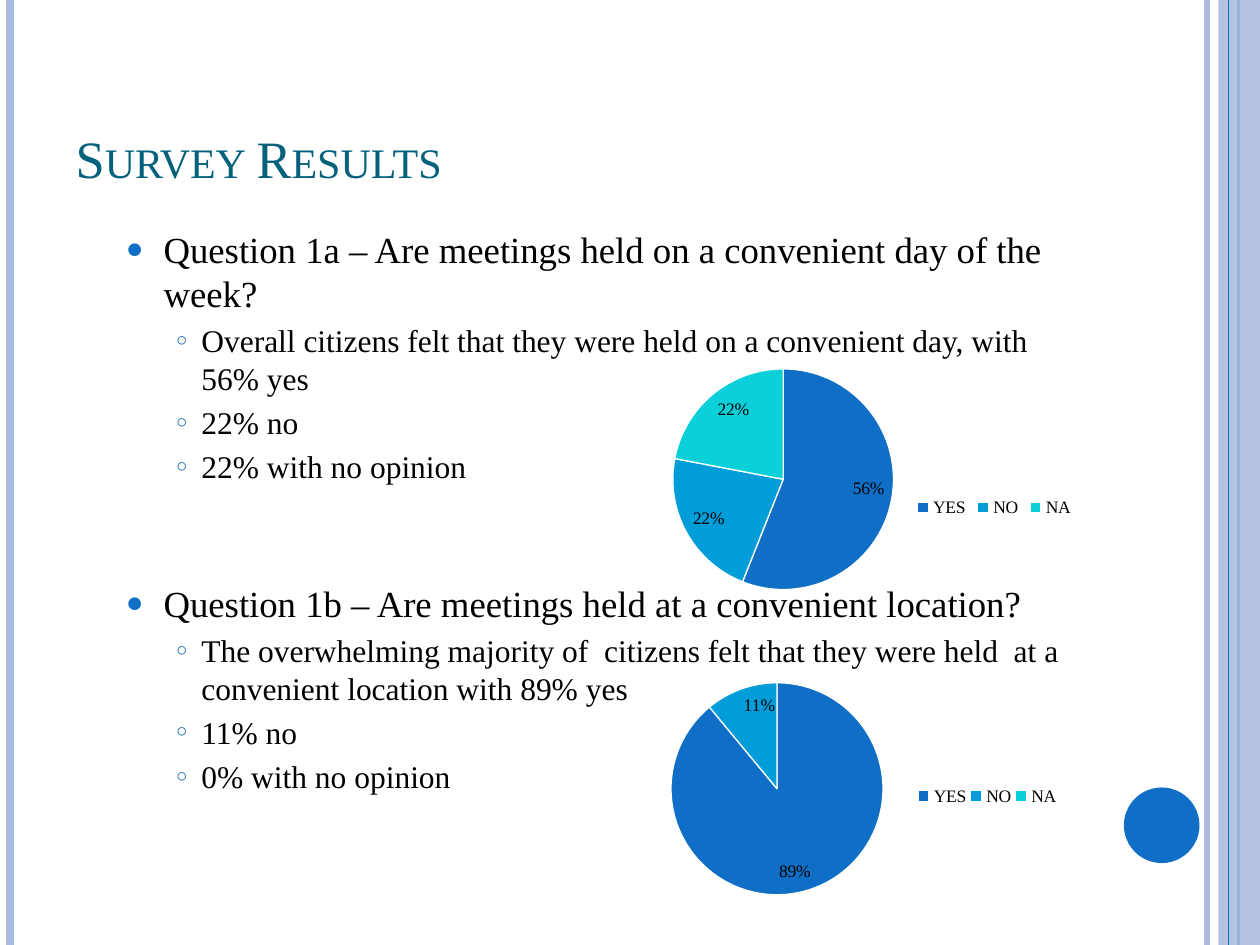
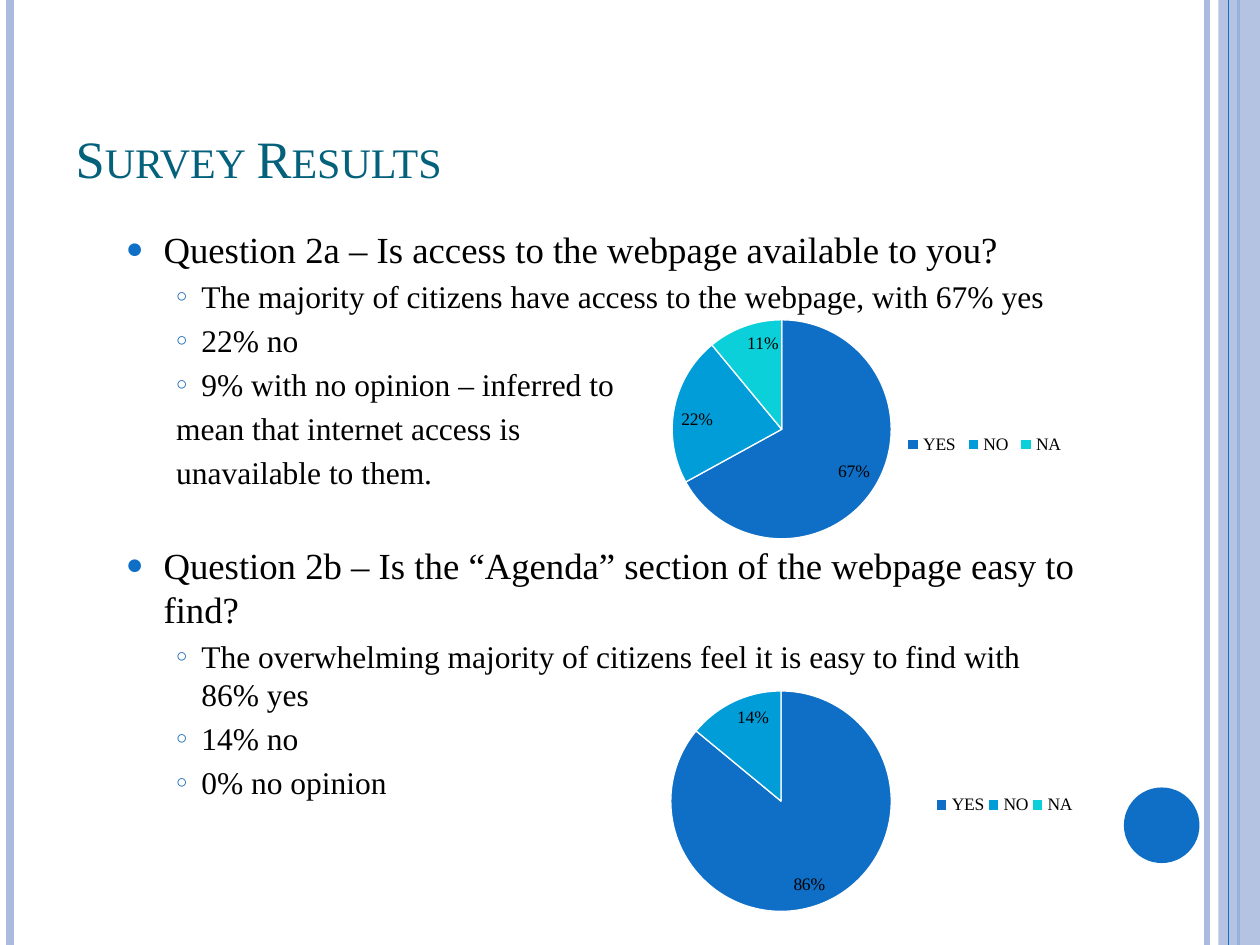
"""Build two survey-result slides with bulleted findings and pie charts."""
from lxml import etree
from pptx import Presentation, util as u
from pptx.chart.data import CategoryChartData
from pptx.dml.color import RGBColor
from pptx.enum import chart as ch, shapes, text
from pptx.oxml.ns import qn

W, H = 10, 7.5
FONT = "Times New Roman"
C = {"title": "04617B", "text": "000000", "blue": "0F6FC6", "sub": "0D62AF",
     "band": "ABBBDF", "no": "009DD9", "na": "0BD0D9", "white": "FFFFFF"}
TITLE = "Survey Results"
ANSWERS = ["YES", "NO", "NA"]
SLICES = ["blue", "no", "na"]
RULES = [(9.58, "band", 3), (0.08, "band", 4.5), (9.83, "blue", 1.5)]
EDGE_RULE = (9.75, "blue", 0.75)

LEVELS = {
    "question": {"size": 21, "left": 0.7, "hang": 0.3, "bullet": "●", "color": "blue", "scale": 80},
    "finding": {"size": 18, "left": 1, "hang": 0.2, "bullet": "○", "color": "sub", "scale": 60},
    "more": {"size": 18, "left": 1, "hang": 0.2, "bullet": None},
}

SLIDES = [
    {"text": [
        ("question", "Question 1a – Are meetings held on a convenient day of the week?", 0),
        ("finding", "Overall citizens felt that they were held on a convenient day, with 56% yes", 0),
        ("finding", "22% no", 0),
        ("finding", "22% with no opinion", 0),
        ("question", "Question 1b – Are meetings held at a convenient location?", 2),
        ("finding", "The overwhelming majority of  citizens felt that they were held  at a "
                    "convenient location with 89% yes", 0),
        ("finding", "11% no", 0),
        ("finding", "0% with no opinion", 0)],
     "pies": [
        {"at": (4.17, 2.92, 4.66, 2.02), "vals": (56, 22, 22),
         "plot": (0.251, 0.004, 0.376, 0.867), "legend": (7.23, 3.92, 1.32)},
        {"at": (4.25, 5.17, 4.5, 2), "vals": (89, 11, None),
         "plot": (0.239, 0.091, 0.374, 0.909), "legend": (7.25, 6.21, 1.17)}]},
    {"text": [
        ("question", "Question 2a – Is access to the webpage available to you?", 0),
        ("finding", "The majority of citizens have access to the webpage, with 67% yes", 0),
        ("finding", "22% no", 0),
        ("finding", "9% with no opinion – inferred to", 0),
        ("more", "mean that internet access is", 0),
        ("more", "unavailable to them.", 0),
        ("question", "Question 2b – Is the “Agenda” section of the webpage easy to find?", 1),
        ("finding", "The overwhelming majority of citizens feel it is easy to find with 86% yes", 0),
        ("finding", "14% no", 0),
        ("finding", "0% no opinion", 0)],
     "pies": [
        {"at": (3.83, 2.5, 5.08, 1.83), "vals": (67, 22, 11),
         "plot": (0.296, 0.021, 0.343, 0.95), "legend": (7.15, 3.42, 1.32)},
        {"at": (3.83, 5.33, 4.82, 2), "vals": (86, 14, None),
         "plot": (0.31, 0.077, 0.363, 0.876), "legend": (7.4, 6.28, 1.14)}]},
]


def rgb(name):
    return RGBColor.from_string(C[name])


def box(*lengths):
    return [u.Inches(n) for n in lengths]


def put(obj, **values):
    for key, value in values.items():
        setattr(obj, key, value)


def sub(parent, tag, **attrs):
    return etree.SubElement(parent, qn(tag), attrs)


def rule(s, x, color, width):
    sp = s.shapes.add_connector(shapes.MSO_CONNECTOR.STRAIGHT, *box(x, 0, x, H))
    sp.line.color.rgb = rgb(color)
    sp.line.width = u.Pt(width)
    sub(sp._element.spPr, "a:effectLst")


def solid(s, kind, at, color, alpha=None):
    sp = s.shapes.add_shape(kind, *box(*at))
    sp.shadow.inherit = False
    sp.fill.solid()
    sp.fill.fore_color.rgb = rgb(color)
    sp.line.fill.background()
    if alpha:
        sub(sp._element.spPr.find(".//" + qn("a:srgbClr")), "a:alpha", val=str(alpha * 1000))


def frame(s):
    for line in RULES:
        rule(s, *line)
    solid(s, shapes.MSO_SHAPE.RECTANGLE, (9.67, 0, 0.33, H), "band", 87)
    rule(s, *EDGE_RULE)
    solid(s, shapes.MSO_SHAPE.OVAL, (8.92, 6.25, 0.6, 0.6), "blue")


def title(s):
    sp = s.shapes.title
    put(sp, **dict(zip(("left", "top", "width", "height"), box(0.5, 0.3, 8.17, 1.25))))
    tf = sp.text_frame
    tf.text = TITLE
    tf.vertical_anchor = text.MSO_ANCHOR.BOTTOM
    p = tf.paragraphs[0]
    p.alignment = text.PP_ALIGN.LEFT
    r = p.runs[0]
    put(r.font, name=FONT, size=u.Pt(30))
    r.font.color.rgb = rgb("title")
    r.font._element.set("cap", "small")


def findings(s, lines):
    tf = s.shapes.add_textbox(*box(0.5, 1.75, 8.17, 5.33)).text_frame
    tf.word_wrap = True
    for i, (level, words, skipped) in enumerate(lines):
        fmt = LEVELS[level]
        p = tf.paragraphs[0] if i == 0 else tf.add_paragraph()
        gap = 0.2 * fmt["size"] + skipped * 1.4 * LEVELS["finding"]["size"]
        put(p, space_before=u.Pt(gap), line_spacing=u.Pt(1.2 * fmt["size"]))
        r = p.add_run()
        r.text = words
        put(r.font, name=FONT, size=u.Pt(fmt["size"]))
        r.font.color.rgb = rgb("text")
        pPr = p._p.get_or_add_pPr()
        pPr.set("marL", str(u.Inches(fmt["left"])))
        pPr.set("indent", str(-u.Inches(fmt["hang"])))
        if fmt["bullet"]:
            sub(sub(pPr, "a:buClr"), "a:srgbClr", val=C[fmt["color"]])
            sub(pPr, "a:buSzPct", val=str(fmt["scale"] * 1000))
            sub(pPr, "a:buFont", typeface=FONT)
            sub(pPr, "a:buChar", char=fmt["bullet"])
        else:
            sub(pPr, "a:buNone")


def place(owner, shares, inner=False):
    for old in owner.findall(qn("c:layout")):
        owner.remove(old)
    layout = etree.Element(qn("c:layout"))
    manual = sub(layout, "c:manualLayout")
    if inner:
        sub(manual, "c:layoutTarget", val="inner")
    for key in ("xMode", "yMode"):
        sub(manual, "c:" + key, val="edge")
    for key, share in zip("xywh", shares):
        sub(manual, "c:" + key, val=f"{share:.3f}")
    owner.insert(0 if inner else 1, layout)


def pie(s, at, vals, plot, legend):
    data = CategoryChartData()
    data.categories = ANSWERS
    data.add_series("Series 1", vals)
    chart = s.shapes.add_chart(ch.XL_CHART_TYPE.PIE, *box(*at), data).chart
    put(chart, has_title=False, has_legend=True)
    put(chart.font, name=FONT, size=u.Pt(10))
    chart.font.color.rgb = rgb("text")
    put(chart.legend, position=ch.XL_LEGEND_POSITION.TOP, include_in_layout=False)
    pies = chart.plots[0]
    put(pies, vary_by_categories=True, has_data_labels=True)
    put(pies.data_labels, show_percentage=True, show_value=False, number_format="0%",
        number_format_is_linked=False, position=ch.XL_LABEL_POSITION.INSIDE_END)
    for i, color in enumerate(SLICES):
        slice_format = pies.series[0].points[i].format
        slice_format.fill.solid()
        slice_format.fill.fore_color.rgb = rgb(color)
        slice_format.line.color.rgb = rgb("white")
        slice_format.line.width = u.Pt(0.75)
    left, top, width, height = at
    x, y, w = legend
    place(chart._chartSpace.chart.plotArea, plot, inner=True)
    place(chart.legend._element, ((x - left) / width, (y - top) / height, w / width, 0.22 / height))


def main():
    prs = Presentation()
    put(prs, slide_width=u.Inches(W), slide_height=u.Inches(H))
    for content in SLIDES:
        s = prs.slides.add_slide(prs.slide_layouts[5])
        frame(s)
        title(s)
        findings(s, content["text"])
        for spec in content["pies"]:
            pie(s, **spec)
    prs.save("out.pptx")


if __name__ == "__main__":
    main()
